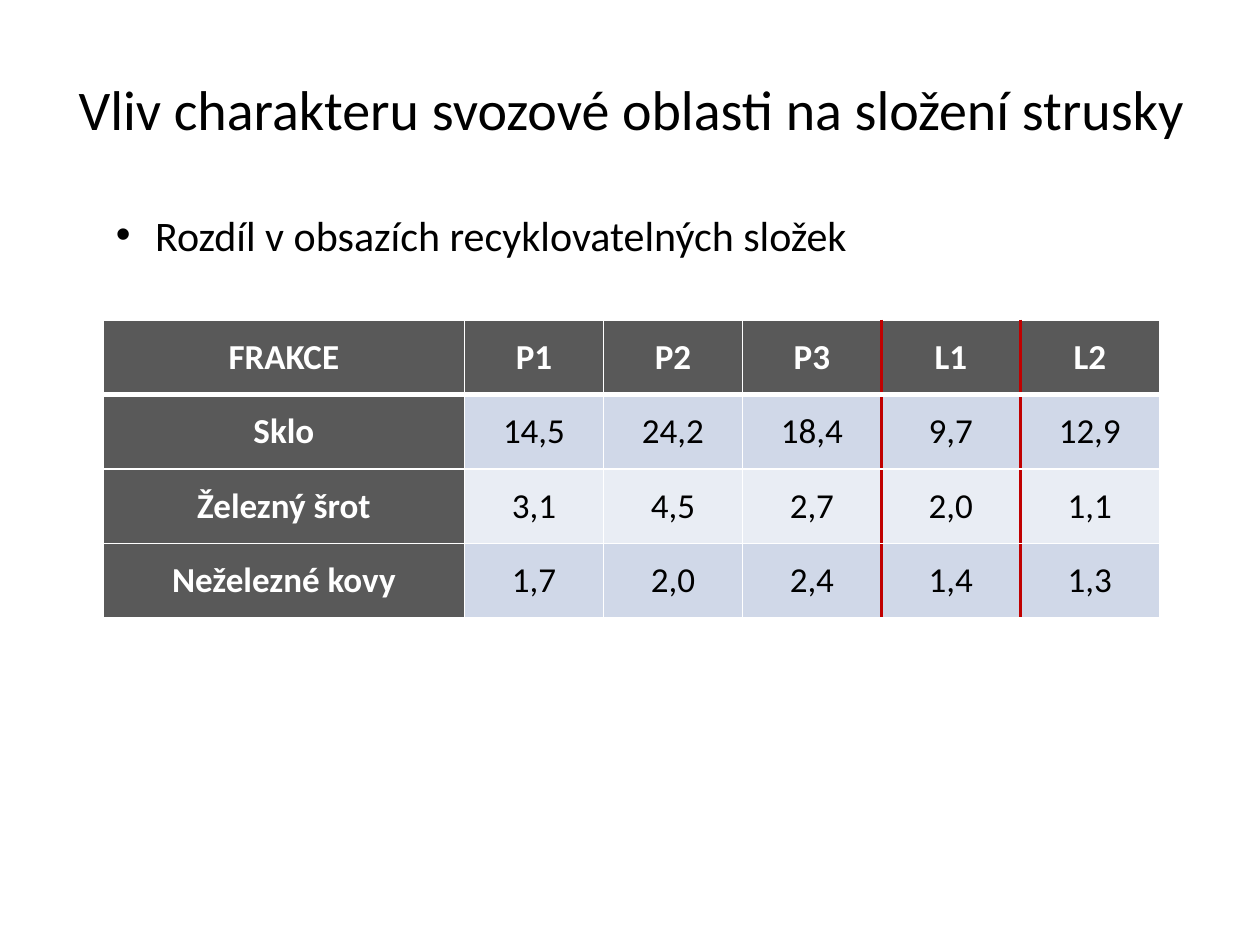
from lxml.etree import SubElement
from pptx import Presentation
from pptx.dml.color import RGBColor
from pptx.enum.text import MSO_ANCHOR as Anchor, MSO_AUTO_SIZE as AutoSize, PP_ALIGN as Align
from pptx.oxml.ns import qn
from pptx.util import Pt

FONT = "Calibri"
BLACK, WHITE, GREY, RED = "000000", "FFFFFF", "595959", "C00000"
BANDS = ("D0D8E8", "E9EDF4")

FRACTIONS = [
    ["FRAKCE", "P1", "P2", "P3", "L1", "L2"],
    ["Sklo", "14,5", "24,2", "18,4", "9,7", "12,9"],
    ["Železný šrot", "3,1", "4,5", "2,7", "2,0", "1,1"],
    ["Neželezné kovy", "1,7", "2,0", "2,4", "1,4", "1,3"],
]
RED_EDGES = (4, 5)  # column edges on either side of L1


def color(hex_code):
    return RGBColor.from_string(hex_code)


def format_runs(paragraph, size, hex_code, bold=False):
    for run in paragraph.runs:
        run.font.name = FONT
        run.font.size = Pt(size)
        run.font.bold = bold
        run.font.color.rgb = color(hex_code)


def place_text(placeholder, box, text, size, align):
    placeholder.left, placeholder.top, placeholder.width, placeholder.height = map(Pt, box)
    frame = placeholder.text_frame
    frame.text = text
    frame.word_wrap = False
    frame.auto_size = AutoSize.SHAPE_TO_FIT_TEXT
    frame.vertical_anchor = Anchor.TOP
    paragraph = frame.paragraphs[0]
    paragraph.alignment = align
    paragraph.space_before = Pt(0)
    format_runs(paragraph, size, BLACK)
    return paragraph


def add_title(slide, box):
    place_text(slide.shapes.title, box,
               "Vliv charakteru svozové oblasti na složení strusky", 32, Align.CENTER)


def add_bullet(slide, box):
    paragraph = place_text(slide.placeholders[1], box,
                           "Rozdíl v obsazích recyklovatelných složek", 24, Align.LEFT)
    properties = paragraph._p.get_or_add_pPr()
    properties.set("marL", str(Pt(22.5)))
    properties.set("indent", str(-Pt(22.5)))
    SubElement(properties, qn("a:buFont")).set("typeface", "Arial")
    SubElement(properties, qn("a:buChar")).set("char", "•")


def set_border(cell, side, hex_code, width):
    line = SubElement(cell._tc.get_or_add_tcPr(), qn(f"a:ln{side}"), w=str(Pt(width)))
    fill = SubElement(line, qn("a:solidFill"))
    SubElement(fill, qn("a:srgbClr")).set("val", hex_code)


def format_cell(cell, row, column):
    heading = row == 0 or column == 0

    # Borders come before the fill in the cell properties
    for side, edge in (("L", column), ("R", column + 1)):
        set_border(cell, side, *((RED, 2.25) if edge in RED_EDGES else (WHITE, 1)))
    for side, edge in (("T", row), ("B", row + 1)):
        set_border(cell, side, WHITE, 3 if edge == 1 else 1)

    cell.fill.solid()
    cell.fill.fore_color.rgb = color(GREY if heading else BANDS[(row - 1) % 2])
    cell.vertical_anchor = Anchor.MIDDLE
    cell.margin_left = cell.margin_right = Pt(3.6)
    cell.margin_top = cell.margin_bottom = Pt(0)
    paragraph = cell.text_frame.paragraphs[0]
    paragraph.alignment = Align.CENTER
    format_runs(paragraph, 20, WHITE if heading else BLACK, heading)


def add_fraction_table(slide, box, label_width):
    left, top, width, height = box
    row_count, column_count = len(FRACTIONS), len(FRACTIONS[0])
    table = slide.shapes.add_table(row_count, column_count, *map(Pt, box)).table
    for index, column in enumerate(table.columns):
        column.width = Pt((width - label_width) / (column_count - 1) if index else label_width)
    for row in table.rows:
        row.height = Pt(height / row_count)
    for r, values in enumerate(FRACTIONS):
        for c, value in enumerate(values):
            cell = table.cell(r, c)
            cell.text = value
            format_cell(cell, r, c)


def main():
    presentation = Presentation()
    presentation.slide_width, presentation.slide_height = Pt(720), Pt(540)
    slide = presentation.slides.add_slide(presentation.slide_layouts[1])
    add_title(slide, (34.5, 39, 653, 46))
    add_fraction_table(slide, (59, 183, 603.5, 170), label_width=206.5)
    add_bullet(slide, (59, 116, 441.5, 36))
    presentation.save("out.pptx")


if __name__ == "__main__":
    main()
